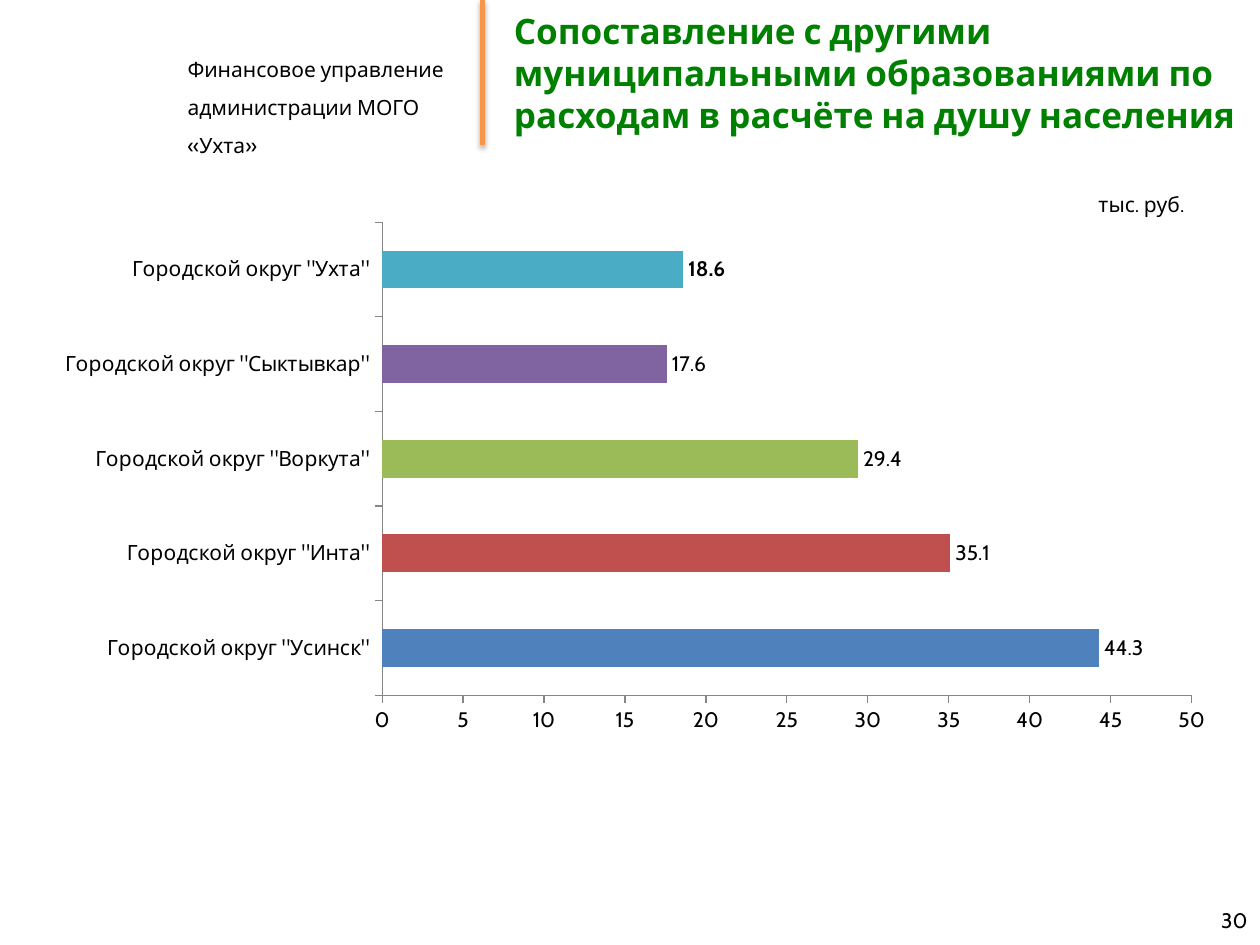
from lxml import etree
from pptx import Presentation
from pptx.chart.data import CategoryChartData
from pptx.dml.color import RGBColor
from pptx.enum.chart import XL_CHART_TYPE, XL_LABEL_POSITION, XL_TICK_MARK
from pptx.enum.shapes import MSO_CONNECTOR
from pptx.enum.text import MSO_ANCHOR, PP_ALIGN
from pptx.oxml import parse_xml
from pptx.oxml.ns import nsdecls, qn
from pptx.util import Inches, Pt

BAR = XL_CHART_TYPE.BAR_CLUSTERED
OUTSIDE = XL_LABEL_POSITION.OUTSIDE_END
TICK_OUT, TICK_NONE = XL_TICK_MARK.OUTSIDE, XL_TICK_MARK.NONE
STRAIGHT = MSO_CONNECTOR.STRAIGHT
TOP, MIDDLE = MSO_ANCHOR.TOP, MSO_ANCHOR.MIDDLE
LEFT, RIGHT = PP_ALIGN.LEFT, PP_ALIGN.RIGHT

FONT = "Cabin"
COLORS = {"text": "000000", "title": "008000", "accent": "F79646",
          "axis": "868686", "white": "FFFFFF"}
DISTRICTS = [
    ("Усинск", 44.3, "4F81BD"),
    ("Инта", 35.1, "C0504D"),
    ("Воркута", 29.4, "9BBB59"),
    ("Сыктывкар", 17.6, "8064A2"),
    ("Ухта", 18.6, "4BACC6"),
]


def style(font, size, color="text", bold=False):
    font.name = FONT
    font.size = Pt(size)
    font.bold = bold
    font.color.rgb = RGBColor.from_string(COLORS[color])


def add_text(box, lines, size=12, color="text", bold=False,
             anchor=TOP, align=LEFT, spacing=None, wrap=True):
    sp = s.shapes.add_textbox(*[Inches(v) for v in box])
    tf = sp.text_frame
    tf.word_wrap = wrap
    tf.vertical_anchor = anchor
    tf.text = "\n".join(lines)
    for p in tf.paragraphs:
        p.alignment = align
        p.line_spacing = spacing
        for r in p.runs:
            style(r.font, size, color, bold)
    return sp


prs = Presentation()
prs.slide_width, prs.slide_height = Inches(10), Inches(7.5)
s = prs.slides.add_slide(prs.slide_layouts[6])

add_text((1.39, 0.3, 2.5, 0.66),
         ["Финансовое управление", "администрации МОГО «Ухта»"], spacing=1.5)

divider = s.shapes.add_connector(STRAIGHT, Inches(3.83), Inches(0), Inches(3.83), Inches(1.15))
divider.line.color.rgb = RGBColor.from_string(COLORS["accent"])
divider.line.width = Pt(3)
divider._element.spPr.append(parse_xml(
    f'<a:effectLst {nsdecls("a")}><a:outerShdw blurRad="40000" dist="23000" dir="5400000" '
    'rotWithShape="0"><a:srgbClr val="000000"><a:alpha val="35000"/></a:srgbClr>'
    '</a:outerShdw></a:effectLst>'))

add_text((3.98, 0, 6.02, 1.15),
         ["Сопоставление с другими муниципальными образованиями по расходам "
          "в расчёте на душу населения"],
         size=20, color="title", bold=True, anchor=MIDDLE)
add_text((7.67, 7.1, 2.33, 0.4), ["30"], anchor=MIDDLE, align=RIGHT)

data = CategoryChartData(number_format="0.0")
data.categories = [f'Городской округ "{name}"' for name, _, _ in DISTRICTS]
data.add_series("Series 1", [value for _, value, _ in DISTRICTS])
chart = s.shapes.add_chart(BAR, Inches(0.33), Inches(1.68), Inches(9.42), Inches(4.22), data).chart
chart.has_legend = False
chart.has_title = False
style(chart.font, 18)

value_axis = chart.value_axis
value_axis.minimum_scale, value_axis.maximum_scale = 0, 50
value_axis.major_unit = 5
value_axis.has_major_gridlines = False
value_axis.tick_labels.number_format = "0"
value_axis.tick_labels.number_format_is_linked = False
for axis in (chart.category_axis, value_axis):
    axis.major_tick_mark, axis.minor_tick_mark = TICK_OUT, TICK_NONE
    axis.format.line.color.rgb = RGBColor.from_string(COLORS["axis"])
    axis.format.line.width = Pt(0.75)
    style(axis.tick_labels.font, 12)

plot = chart.plots[0]
plot.gap_width = 150
plot.vary_by_categories = False
series = plot.series[0]
labels = series.data_labels
labels.show_value = True
labels.position = OUTSIDE
style(labels.font, 12)
for i, (_, _, color) in enumerate(DISTRICTS):
    fill = series.points[i].format.fill
    fill.solid()
    fill.fore_color.rgb = RGBColor.from_string(color)
own_label = series.points[len(DISTRICTS) - 1].data_label
style(own_label.font, 12, bold=True)
own_label.position = OUTSIDE

plot_area = chart._chartSpace.chart.plotArea
for old in plot_area.findall(qn("c:layout")):
    plot_area.remove(old)
layout = parse_xml(f'<c:layout {nsdecls("c")}><c:manualLayout/></c:layout>')
for tag, val in [("layoutTarget", "inner"), ("xMode", "edge"), ("yMode", "edge"),
                 ("x", "0.287"), ("y", "0.02"), ("w", "0.682"), ("h", "0.89")]:
    etree.SubElement(layout[0], qn(f"c:{tag}")).set("val", val)
plot_area.insert(0, layout)

unit = add_text((8.62, 1.47, 0.9, 0.3), ["тыс. руб."], wrap=False)
unit.fill.solid()
unit.fill.fore_color.rgb = RGBColor.from_string(COLORS["white"])

prs.save("out.pptx")
